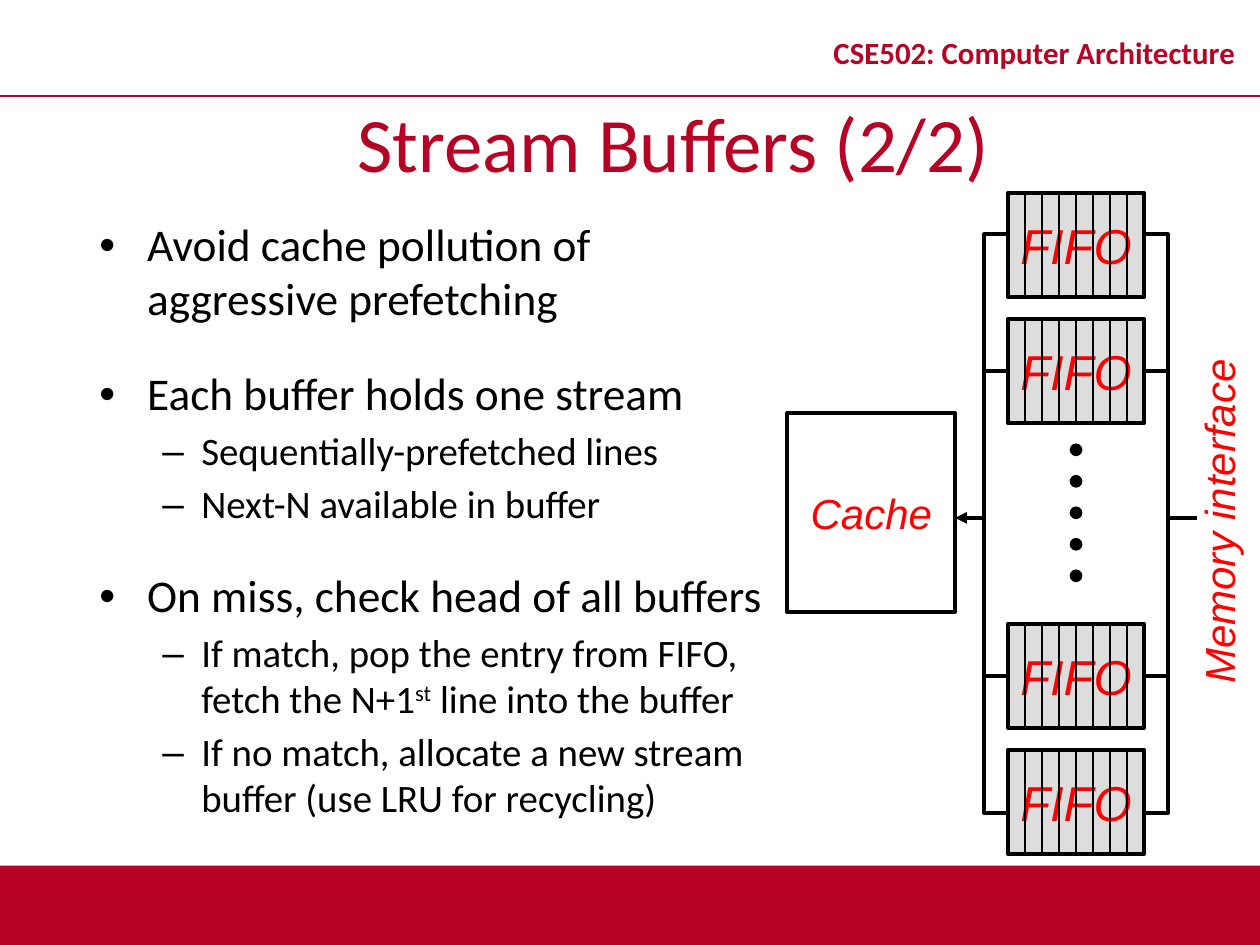
from collections import namedtuple
from dataclasses import dataclass

from lxml.etree import SubElement
from pptx import Presentation
from pptx.dml.color import RGBColor
from pptx.enum.shapes import MSO_CONNECTOR, MSO_SHAPE
from pptx.enum.text import MSO_ANCHOR, PP_ALIGN
from pptx.oxml.ns import qn
from pptx.util import Inches, Pt

Box = namedtuple("Box", "left top width height")


@dataclass(frozen=True)
class Theme:
    brand: RGBColor = RGBColor(0xB6, 0x02, 0x25)
    ink: RGBColor = RGBColor(0, 0, 0)
    paper: RGBColor = RGBColor(255, 255, 255)
    buffer: RGBColor = RGBColor(0xDD, 0xDD, 0xDD)
    label: RGBColor = RGBColor(255, 0, 0)
    text_font: str = "Calibri"
    label_font: str = "Arial"
    course_size: float = 17.6
    title_size: float = 44
    bullet_size: float = 25.9
    detail_size: float = 22.2
    fifo_size: float = 28
    label_size: float = 24
    thin: float = 1.5
    thick: float = 2.25


THEME = Theme()

BULLETS = [
    (0, ["Avoid cache pollution of aggressive prefetching"]),
    (0, ["Each buffer holds one stream"]),
    (1, ["Sequentially-prefetched lines"]),
    (1, ["Next-N available in buffer"]),
    (0, ["On miss, check head of all buffers"]),
    (1, ["If match, pop the entry from FIFO, fetch the N+1", "st", " line into the buffer"]),
    (1, ["If no match, allocate a new stream buffer (use LRU for recycling)"]),
]
BULLET_STYLES = [
    {"symbol": "•", "margin": 0.38, "indent": -0.38, "before": 24, "size": THEME.bullet_size},
    {"symbol": "–", "margin": 0.81, "indent": -0.31, "before": 4.4, "size": THEME.detail_size},
]


def apply_format(target, values):
    for name, value in values.items():
        setattr(target, name, value)


def font_format(size, color=THEME.ink, name=THEME.text_font, **extra):
    return {"size": Pt(size), "name": name, "color": color, **extra}


def label_format(size):
    return font_format(size, THEME.label, THEME.label_font, italic=True)


def add_run(paragraph, text, values):
    run = paragraph.add_run()
    run.text = text
    apply_format(run.font, {name: value for name, value in values.items() if name != "color"})
    run.font.color.rgb = values["color"]
    return run


def write_centered(shape, text, values, wrap=False, line_spacing=1.0):
    frame = shape.text_frame
    apply_format(frame, {"word_wrap": wrap, "vertical_anchor": MSO_ANCHOR.MIDDLE})
    paragraph = frame.paragraphs[0]
    apply_format(paragraph, {"alignment": PP_ALIGN.CENTER, "line_spacing": line_spacing})
    add_run(paragraph, text, values)


def add_textbox(shapes, box):
    return shapes.add_textbox(*map(Inches, box))


def add_block(shapes, kind, box, fill, width=None):
    shape = shapes.add_shape(kind, *map(Inches, box))
    shape.shadow.inherit = False
    shape.fill.solid()
    shape.fill.fore_color.rgb = fill
    if width is None:
        shape.line.fill.background()
    else:
        shape.line.color.rgb = THEME.ink
        shape.line.width = Pt(width)
    return shape


def add_line(shapes, start, end, width, color=THEME.ink, arrow=False):
    line = shapes.add_connector(MSO_CONNECTOR.STRAIGHT, *map(Inches, (*start, *end)))
    line.line.color.rgb = color
    line.line.width = Pt(width)
    properties = line._element.spPr
    if arrow:
        SubElement(properties.find(qn("a:ln")), qn("a:tailEnd"), type="triangle")
    SubElement(properties, qn("a:effectLst"))
    return line


def add_frame(slide, box):
    add_block(slide.shapes, MSO_SHAPE.RECTANGLE,
              Box(box.left, box.height - 0.63, box.width, 0.63), THEME.brand)
    add_line(slide.shapes, (box.left, 0.76), (box.width, 0.76), 1, THEME.brand)
    course = add_textbox(slide.shapes, Box(box.width - 3.58, 0.13, 3.58, 0.63))
    write_centered(course, "CSE502: Computer Architecture",
                   font_format(THEME.course_size, THEME.brand, bold=True), True, 0.8)


def add_title(slide, box):
    write_centered(add_textbox(slide.shapes, box), "Stream Buffers (2/2)",
                   font_format(THEME.title_size, THEME.brand), True)


def add_bullets(slide, box):
    frame = add_textbox(slide.shapes, box).text_frame
    frame.word_wrap = True
    for index, (level, parts) in enumerate(BULLETS):
        style = BULLET_STYLES[level]
        paragraph = frame.add_paragraph() if index else frame.paragraphs[0]
        properties = paragraph._p.get_or_add_pPr()
        properties.set("marL", str(Inches(style["margin"])))
        properties.set("indent", str(Inches(style["indent"])))
        SubElement(properties, qn("a:buFont"), typeface=THEME.label_font)
        SubElement(properties, qn("a:buChar"), char=style["symbol"])
        apply_format(paragraph, {"level": level, "line_spacing": 0.98,
                                 "space_before": Pt(style["before"] if index else 0)})
        for part in parts:
            run = add_run(paragraph, part, font_format(style["size"]))
            if part == "st":
                run._r.get_or_add_rPr().set("baseline", "30000")


def add_fifo(slide, box, cells=8):
    shapes = slide.shapes.add_group_shape().shapes
    fifo = add_block(shapes, MSO_SHAPE.RECTANGLE, box, THEME.buffer, THEME.thick)
    write_centered(fifo, "FIFO", label_format(THEME.fifo_size))
    for cell in range(1, cells):
        x = box.left + box.width * cell / cells
        add_line(shapes, (x, box.top), (x, box.top + box.height), THEME.thin)
    return fifo


def add_bus(slide, box, rail, edge, port, inner_fifos, side, arrow):
    shapes = slide.shapes.add_group_shape().shapes
    bottom = box.top + box.height
    builder = shapes.build_freeform(Inches(edge), Inches(box.top))
    corners = [(rail, box.top), (rail, bottom), (edge, bottom)]
    builder.add_line_segments([tuple(map(Inches, corner)) for corner in corners], close=False)
    bracket = builder.convert_to_shape()
    bracket.shadow.inherit = False
    bracket.fill.background()
    bracket.line.color.rgb = THEME.ink
    bracket.line.width = Pt(THEME.thick)
    for fifo in inner_fifos:
        y = (fifo.top + fifo.height / 2) / Inches(1)
        add_line(shapes, (rail, y), (edge, y), THEME.thick).end_connect(fifo, side)
    add_line(shapes, (rail, 4.11), (port, 4.11), THEME.thick, arrow=arrow)


def add_diagram(slide, box):
    fifo_left, fifo_width, fifo_height = box.left + 1.75, 1.08, 0.83
    fifo_right = fifo_left + fifo_width
    fifos = [add_fifo(slide, Box(fifo_left, box.top + offset, fifo_width, fifo_height))
             for offset in (0, 1, 3.42, 4.42)]
    bus = Box(fifo_left - 0.19, box.top + 0.33, fifo_width + 0.38, 4.59)
    cache_box = Box(box.left, box.top + 1.75, 1.33, 1.58)
    add_bus(slide, bus, bus.left, fifo_left, cache_box.left + cache_box.width,
            fifos[1:3], 1, True)
    cache = add_block(slide.shapes, MSO_SHAPE.RECTANGLE, cache_box, THEME.paper, THEME.thick)
    write_centered(cache, "Cache", label_format(THEME.label_size))
    for step in range(5):
        dot = Box(fifo_left + 0.5, box.top + 2 + step * 0.25, 0.08, 0.08)
        add_block(slide.shapes, MSO_SHAPE.OVAL, dot, THEME.ink, THEME.thin)
    add_bus(slide, bus, bus.left + bus.width, fifo_right, 9.5, fifos[1:3], 3, False)
    memory = add_textbox(slide.shapes, Box(box.left + 2.03, box.top + 2.36, 2.78, 0.5))
    memory.rotation = 270
    write_centered(memory, "Memory interface", label_format(THEME.label_size))


def main():
    presentation = Presentation()
    apply_format(presentation, {"slide_width": Inches(10), "slide_height": Inches(7.5)})
    slide = presentation.slides.add_slide(presentation.slide_layouts[6])
    add_frame(slide, Box(0, 0, 10, 7.5))
    add_title(slide, Box(0.69, 0.74, 9.31, 0.77))
    add_diagram(slide, Box(6.25, 1.53, 3.42, 5.25))
    add_bullets(slide, Box(0.69, 1.69, 5.56, 5.07))
    presentation.save("out.pptx")


if __name__ == "__main__":
    main()
